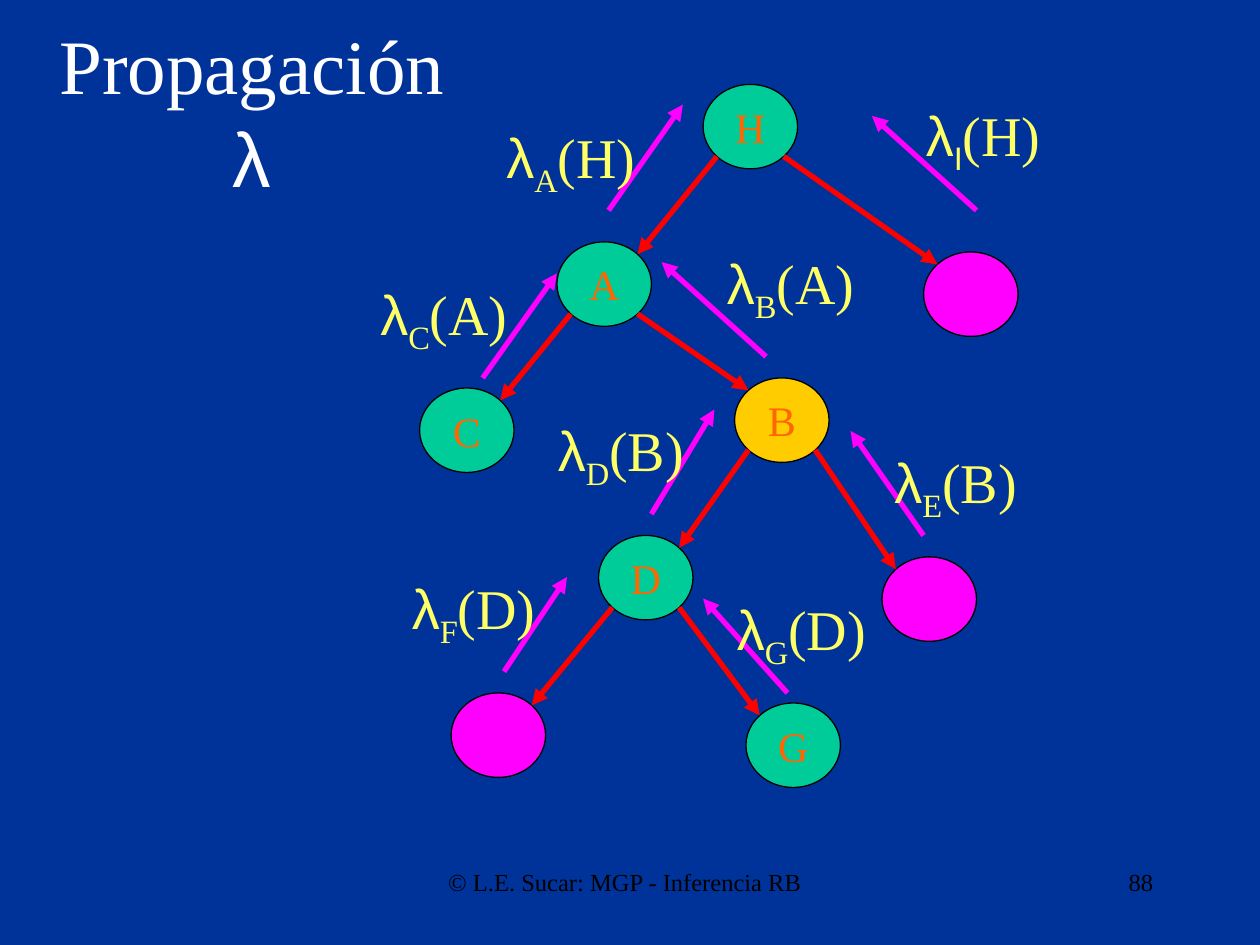
from dataclasses import dataclass
from math import sqrt

from lxml import etree
from pptx import Presentation
from pptx import util as u
from pptx.dml.color import RGBColor
from pptx.enum import shapes, text
from pptx.oxml import ns


@dataclass(frozen=True)
class Theme:
    background: str = "003399"
    title: str = "FFFFFF"
    footer: str = "000000"
    outline: str = "000000"
    known: str = "00CC99"
    query: str = "FFCC00"
    evidence: str = "FF00FF"
    node_text: str = "FF6600"
    edge: str = "FF0000"
    message: str = "FF00FF"
    label: str = "FFFF66"
    serif: str = "Times New Roman"
    sans: str = "Arial"
    title_size: int = 44
    label_size: int = 32
    node_size: int = 24
    footer_size: int = 14


NODE_WIDTH, NODE_HEIGHT = 0.75, 0.67
LABEL_HEIGHT = 0.64

# name: (left, top, kind, text)
NODES = {
    "H": (5.58, 0.67, "known", "H"),
    "A": (4.42, 1.92, "known", "A"),
    "I": (7.33, 2.00, "evidence", ""),
    "C": (3.33, 3.08, "known", "C"),
    "B": (5.83, 3.00, "query", "B"),
    "D": (4.75, 4.25, "known", "D"),
    "E": (7.00, 4.42, "evidence", ""),
    "F": (3.58, 5.50, "evidence", ""),
    "G": (5.92, 5.58, "known", "G"),
}

# parent: (left child, right child)
CHILDREN = {"H": ("A", "I"), "A": ("C", "B"), "B": ("D", "E"), "D": ("F", "G")}

# child, parent, arrow start, arrow end, label left, top and width
MESSAGES = [
    ("Ι", "H", (7.75, 1.67), (6.92, 0.92), (7.25, 0.75, 1.17)),
    ("E", "B", (7.33, 4.25), (6.75, 3.42), (7.00, 3.50, 1.23)),
    ("G", "D", (6.25, 5.50), (5.58, 4.75), (5.75, 4.67, 1.29)),
    ("F", "D", (4.00, 5.33), (4.50, 4.58), (3.17, 4.50, 1.24)),
    ("C", "A", (3.83, 3.00), (4.42, 2.17), (2.92, 2.17, 1.27)),
    ("D", "B", (5.17, 4.08), (5.67, 3.25), (4.33, 3.25, 1.26)),
    ("B", "A", (6.08, 2.83), (5.25, 2.08), (5.67, 1.92, 1.27)),
    ("A", "H", (4.83, 1.67), (5.42, 0.83), (3.92, 0.92, 1.29)),
]


def rim_point(name, across, down):
    """Point on a node's diagonal; across and down are -1 or 1."""
    left, top = NODES[name][:2]
    return (left + NODE_WIDTH / 2 * (1 + across / sqrt(2)),
            top + NODE_HEIGHT / 2 * (1 + down / sqrt(2)))


class TreeSlide:
    """Holds the theme and the slide being drawn."""

    def __init__(self, page, theme):
        self.page = page
        self.theme = theme
        page.background.fill.solid()
        page.background.fill.fore_color.rgb = RGBColor.from_string(theme.background)

    def style(self, font, size, color, face=None):
        font.size = u.Pt(size)
        font.color.rgb = RGBColor.from_string(color)
        font.name = face or self.theme.serif

    def title(self, word, symbol):
        theme = self.theme
        box = self.page.shapes.title
        box.left, box.top, box.width, box.height = map(u.Inches, (0.25, 0.25, 3.5, 1.25))
        frame = box.text_frame
        frame.auto_size = text.MSO_AUTO_SIZE.NONE
        frame.vertical_anchor = text.MSO_ANCHOR.MIDDLE
        para = frame.paragraphs[0]
        para.alignment = text.PP_ALIGN.CENTER
        for words, face in ((word, theme.serif), (symbol, theme.sans)):
            if para.runs:
                para.add_line_break()
            span = para.add_run()
            span.text = words
            self.style(span.font, theme.title_size, theme.title, face)

    def footer(self, words, left, width, alignment):
        box = self.page.shapes.add_textbox(*map(u.Inches, (left, 6.83, width, 0.5)))
        box.text_frame.word_wrap = True
        para = box.text_frame.paragraphs[0]
        para.text = words
        para.alignment = alignment
        self.style(para.font, self.theme.footer_size, self.theme.footer)

    def node(self, left, top, kind, words):
        oval = self.page.shapes.add_shape(
            shapes.MSO_SHAPE.OVAL, *map(u.Inches, (left, top, NODE_WIDTH, NODE_HEIGHT)))
        oval.shadow.inherit = False
        oval.fill.solid()
        oval.fill.fore_color.rgb = RGBColor.from_string(getattr(self.theme, kind))
        oval.line.color.rgb = RGBColor.from_string(self.theme.outline)
        oval.line.width = u.Pt(0.75)
        if words:
            frame = oval.text_frame
            frame.word_wrap = False
            frame.vertical_anchor = text.MSO_ANCHOR.MIDDLE
            para = frame.paragraphs[0]
            para.text = words
            para.alignment = text.PP_ALIGN.CENTER
            self.style(para.font, self.theme.node_size, self.theme.node_text)

    def arrow(self, start, end, color, parent=None):
        parent = parent or self.page
        line = parent.shapes.add_connector(
            shapes.MSO_CONNECTOR.STRAIGHT, *map(u.Inches, (*start, *end)))
        line.line.color.rgb = RGBColor.from_string(color)
        line.line.width = u.Pt(3)
        properties = line.element.spPr
        outline = properties.find(ns.qn("a:ln"))
        etree.SubElement(outline, ns.qn("a:tailEnd"), type="triangle")
        etree.SubElement(properties, ns.qn("a:effectLst"))

    def message(self, child, parent, start, end, place):
        """Groups an upward arrow with its label λ child (parent)."""
        theme = self.theme
        group = self.page.shapes.add_group_shape()
        self.arrow(start, end, theme.message, group)
        box = group.shapes.add_textbox(*map(u.Inches, (*place, LABEL_HEIGHT)))
        box.text_frame.word_wrap = False
        box.text_frame.auto_size = text.MSO_AUTO_SIZE.SHAPE_TO_FIT_TEXT
        para = box.text_frame.paragraphs[0]
        child_face = theme.sans if child == "Ι" else theme.serif
        for words, face, baseline in (("λ", theme.sans, 0), (child, child_face, -25000),
                                      (f"({parent})", theme.serif, 0)):
            span = para.add_run()
            span.text = words
            self.style(span.font, theme.label_size, theme.label, face)
            if baseline:
                span._r.get_or_add_rPr().set("baseline", str(baseline))


def main():
    deck = Presentation()
    deck.slide_width, deck.slide_height = u.Inches(10), u.Inches(7.5)
    theme = Theme()
    slide = TreeSlide(deck.slides.add_slide(deck.slide_layouts[5]), theme)

    slide.footer("© L.E. Sucar: MGP - Inferencia RB", 3, 3.92, text.PP_ALIGN.CENTER)
    slide.footer("88", 7.17, 2.08, text.PP_ALIGN.RIGHT)
    slide.title("Propagación", "λ")
    for node in NODES.values():
        slide.node(*node)
    for parent, children in CHILDREN.items():
        for child, side in zip(children, (-1, 1)):
            slide.arrow(rim_point(parent, side, 1), rim_point(child, -side, -1), theme.edge)
    for message in MESSAGES:
        slide.message(*message)

    deck.save("out.pptx")


if __name__ == "__main__":
    main()
